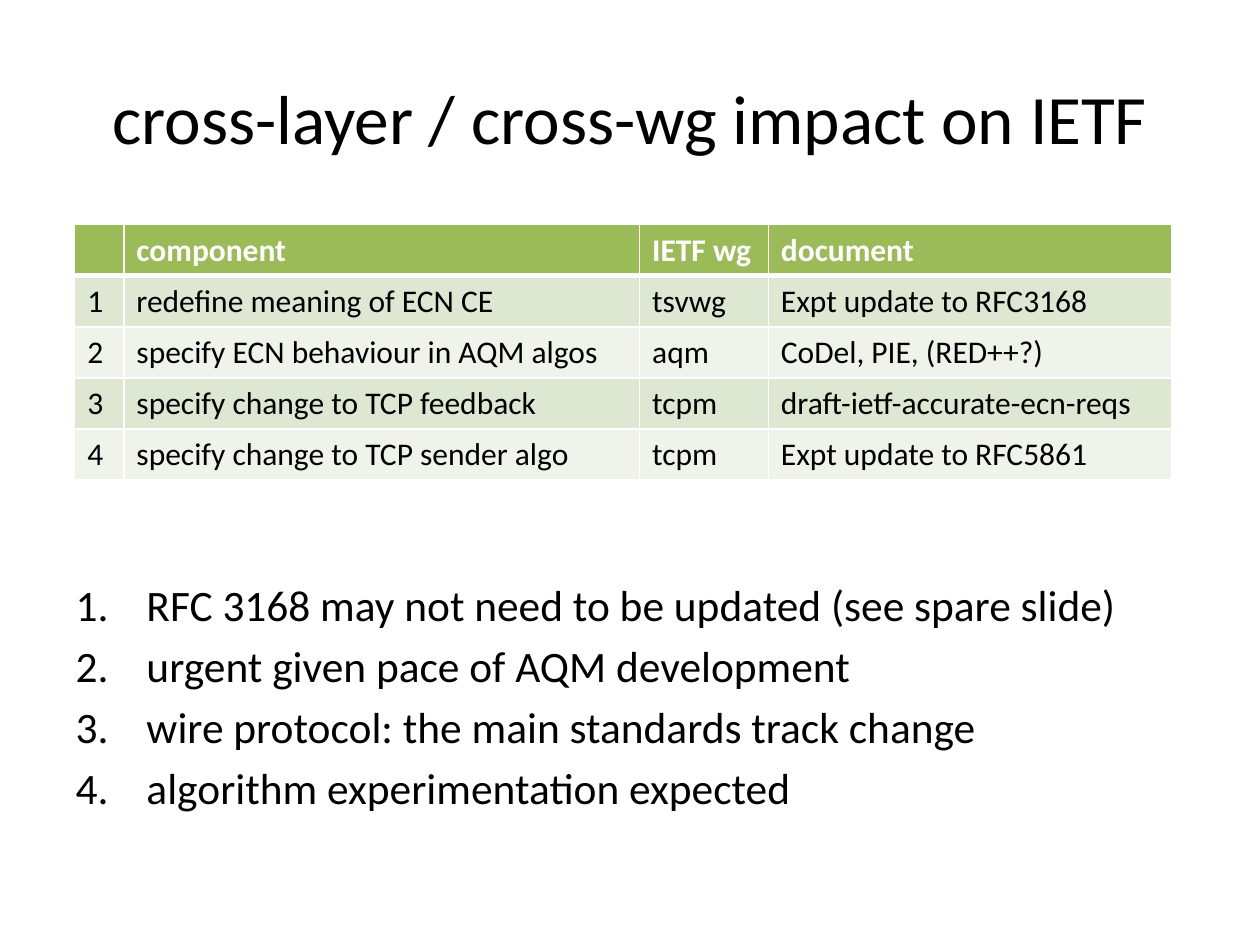
from pptx import Presentation
from pptx.dml.color import RGBColor
from pptx.enum import text as t
from pptx.oxml import parse_xml
from pptx.oxml import ns
from pptx.util import Pt

# Content
TITLE = "cross-layer / cross-wg impact on IETF"
HEADER = ("", "component", "IETF wg", "document")
COMPONENTS = [
    ("1", "redefine meaning of ECN CE", "tsvwg", "Expt update to RFC3168"),
    ("2", "specify ECN behaviour in AQM algos", "aqm", "CoDel, PIE, (RED++?)"),
    ("3", "specify change to TCP feedback", "tcpm", "draft-ietf-accurate-ecn-reqs"),
    ("4", "specify change to TCP sender algo", "tcpm", "Expt update to RFC5861"),
]
REMARKS = [
    "RFC 3168 may not need to be updated (see spare slide)",
    "urgent given pace of AQM development",
    "wire protocol: the main standards track change",
    "algorithm experimentation expected",
]

# Format, lengths in points
FONT = "Calibri"
BLACK = RGBColor(0x00, 0x00, 0x00)
WHITE = RGBColor(0xFF, 0xFF, 0xFF)
GREEN = RGBColor(0x9B, 0xBB, 0x59)
BANDS = (RGBColor(0xDE, 0xE7, 0xD1), RGBColor(0xEF, 0xF3, 0xEA))
TITLE_BOX = (36, 21.6, 648, 90)
REMARKS_BOX = (36, 326.9, 648, 155.5)
TABLE_LEFT, TABLE_TOP = 42.7, 128.4
COLUMN_WIDTHS = (28.1, 294.7, 73.6, 230.4)
ROW_HEIGHT = 29.2
INDENT = 40.5


def write(paragraph, content, size, color=BLACK, bold=False):
    run = paragraph.add_run()
    run.text = content
    run.font.name = FONT
    run.font.size = Pt(size)
    run.font.bold = bold
    run.font.color.rgb = color


def place(shape, box):
    shape.left, shape.top, shape.width, shape.height = map(Pt, box)
    shape.text_frame.word_wrap = True
    shape.text_frame.auto_size = t.MSO_AUTO_SIZE.NONE


def number(paragraph):
    properties = paragraph._p.get_or_add_pPr()
    properties.set("marL", str(Pt(INDENT)))
    properties.set("indent", str(-Pt(INDENT)))
    properties.append(parse_xml(
        f'<a:buFont {ns.nsdecls("a")} typeface="+mj-lt"/>'))
    properties.append(parse_xml(
        f'<a:buAutoNum {ns.nsdecls("a")} type="arabicPeriod"/>'))


def set_borders(cell, widths):
    properties = cell._tc.get_or_add_tcPr()
    for position, (side, width) in enumerate(widths.items()):
        properties.insert(position, parse_xml(
            f'<a:ln{side} {ns.nsdecls("a")} w="{Pt(width)}"><a:solidFill>'
            f'<a:srgbClr val="{WHITE}"/></a:solidFill></a:ln{side}>'))


presentation = Presentation()
presentation.slide_width, presentation.slide_height = Pt(720), Pt(540)
slide = presentation.slides.add_slide(presentation.slide_layouts[1])

# Title
title = slide.shapes.title
place(title, TITLE_BOX)
title.text_frame.vertical_anchor = t.MSO_ANCHOR.MIDDLE
heading = title.text_frame.paragraphs[0]
heading.alignment = t.PP_ALIGN.CENTER
write(heading, TITLE, size=39.6)

# Numbered remarks
body = slide.placeholders[1]
place(body, REMARKS_BOX)
for index, remark in enumerate(REMARKS):
    frame = body.text_frame
    paragraph = frame.add_paragraph() if index else frame.paragraphs[0]
    number(paragraph)
    write(paragraph, remark, size=24.8)

# Component table
rows = [HEADER, *COMPONENTS]
table = slide.shapes.add_table(
    len(rows), len(HEADER), Pt(TABLE_LEFT), Pt(TABLE_TOP),
    Pt(sum(COLUMN_WIDTHS)), Pt(ROW_HEIGHT * len(rows))).table
for column, width in zip(table.columns, COLUMN_WIDTHS):
    column.width = Pt(width)
for row_index, row in enumerate(rows):
    table.rows[row_index].height = Pt(ROW_HEIGHT)
    is_header = row_index == 0
    for column_index, content in enumerate(row):
        cell = table.cell(row_index, column_index)
        cell.fill.solid()
        cell.fill.fore_color.rgb = GREEN if is_header else BANDS[(row_index - 1) % 2]
        set_borders(cell, {"L": 1, "R": 1, "T": 3 if row_index == 1 else 1,
                           "B": 3 if is_header else 1})
        if content:
            write(cell.text_frame.paragraphs[0], content, size=18,
                  color=WHITE if is_header else BLACK, bold=is_header)

presentation.save("out.pptx")
